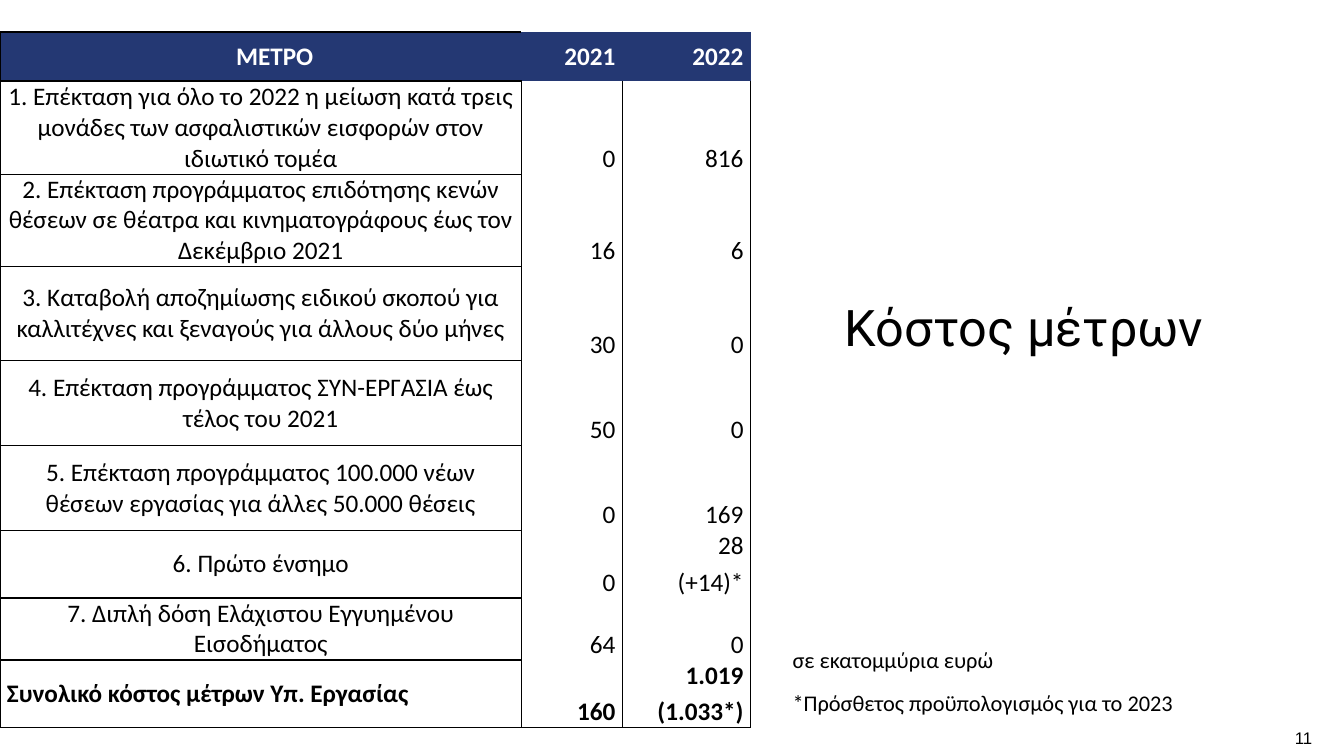
from lxml import etree
from pptx import Presentation
from pptx import util as u
from pptx.dml.color import RGBColor
from pptx.enum import text
from pptx.oxml import ns

EMU_PER_PX = 9080
COLOURS = {"ink": "000000", "header": "243873", "paper": "FFFFFF"}
LEFT, CENTRE, RIGHT = text.PP_ALIGN.LEFT, text.PP_ALIGN.CENTER, text.PP_ALIGN.RIGHT
TOP, MIDDLE, BOTTOM = text.MSO_ANCHOR.TOP, text.MSO_ANCHOR.MIDDLE, text.MSO_ANCHOR.BOTTOM

COLUMN_WIDTHS = [521, 101, 128]
ROW_HEIGHTS = [49, 93, 92, 94, 85, 85, 67, 62, 67]
MEASURES = [
    ("ΜΕΤΡΟ", "2021", "2022"),
    ("1. Επέκταση για όλο το 2022 η μείωση κατά τρεις μονάδες των ασφαλιστικών "
     "εισφορών στον ιδιωτικό τομέα", "0", "816"),
    ("2. Επέκταση προγράμματος επιδότησης κενών θέσεων σε θέατρα και "
     "κινηματογράφους έως τον Δεκέμβριο 2021", "16", "6"),
    ("3. Καταβολή αποζημίωσης ειδικού σκοπού για καλλιτέχνες και ξεναγούς "
     "για άλλους δύο μήνες", "30", "0"),
    ("4. Επέκταση προγράμματος ΣΥΝ-ΕΡΓΑΣΙΑ έως τέλος του 2021", "50", "0"),
    ("5. Επέκταση προγράμματος 100.000 νέων θέσεων εργασίας για άλλες 50.000 θέσεις",
     "0", "169"),
    ("6. Πρώτο ένσημο", "0", "28\n(+14)*"),
    ("7. Διπλή δόση Ελάχιστου Εγγυημένου Εισοδήματος", "64", "0"),
    ("Συνολικό κόστος μέτρων Υπ. Εργασίας", "160", "1.019\n(1.033*)"),
]


def px(length):
    return u.Emu(length * EMU_PER_PX)


class CostSlide:
    """Holds the style and the current slide, and adds its elements."""

    def __init__(self, deck):
        self.slide = deck.slides.add_slide(deck.slide_layouts[5])

    def set_words(self, frame, words, size, font="Calibri", colour="ink", bold=False,
                  align=LEFT, after=0, before=0):
        frame.text = words
        for index, paragraph in enumerate(frame.paragraphs):
            paragraph.alignment = align
            paragraph.space_before = u.Pt(before if index else 0)
            paragraph.space_after = u.Pt(after)
            for run in paragraph.runs:
                run.font.size = u.Pt(size)
                run.font.name = font
                run.font.bold = bold
                run.font.color.rgb = RGBColor.from_string(COLOURS[colour])

    def title(self, words, x, y, width, height):
        heading = self.slide.shapes.title
        heading.left, heading.top = px(x), px(y)
        heading.width, heading.height = px(width), px(height)
        frame = heading.text_frame
        frame.word_wrap = True
        frame.auto_size = text.MSO_AUTO_SIZE.NONE
        frame.vertical_anchor = TOP
        self.set_words(frame, words, 36, font="Roboto")

    def label(self, words, x, y, width, height, size, inset=10, **style):
        frame = self.slide.shapes.add_textbox(px(x), px(y), px(width), px(height)).text_frame
        frame.word_wrap = True
        frame.margin_left = frame.margin_right = px(inset)
        self.set_words(frame, words, size, **style)

    def borders(self, cell, drawn):
        properties = cell._tc.get_or_add_tcPr()
        for index, side in enumerate("LRTB"):
            line = etree.Element(ns.qn(f"a:ln{side}"), w=str(u.Pt(1)))
            if side in drawn:
                fill = etree.SubElement(line, ns.qn("a:solidFill"))
                etree.SubElement(fill, ns.qn("a:srgbClr"), val=COLOURS["ink"])
            else:
                etree.SubElement(line, ns.qn("a:noFill"))
            properties.insert(index, line)

    def cost_table(self, x, y):
        table = self.slide.shapes.add_table(
            len(MEASURES), len(COLUMN_WIDTHS), px(x), px(y),
            px(sum(COLUMN_WIDTHS)), px(sum(ROW_HEIGHTS))).table
        table.horz_banding = table.first_row = False
        for column, width in zip(table.columns, COLUMN_WIDTHS):
            column.width = px(width)
        for row, height in zip(table.rows, ROW_HEIGHTS):
            row.height = px(height)
        last = len(MEASURES) - 1
        for r, measure in enumerate(MEASURES):
            for c, words in enumerate(measure):
                self.cost_cell(table.cell(r, c), words, r == 0, r == last, c == 0)

    def cost_cell(self, cell, words, is_header, is_total, is_name):
        cell.margin_left = px(35 if is_header and is_name else 7)
        cell.margin_right = px(7)
        cell.margin_top = cell.margin_bottom = 0
        cell.vertical_anchor = MIDDLE if is_header or is_name else BOTTOM
        if is_header:
            cell.fill.solid()
            cell.fill.fore_color.rgb = RGBColor.from_string(COLOURS["header"])
            self.borders(cell, "LTB" if is_name else "")
        else:
            cell.fill.background()
            self.borders(cell, "LRTB" if is_name else "LRB")
        name_align = LEFT if is_total else CENTRE
        self.set_words(cell.text_frame, words, 18, colour="paper" if is_header else "ink",
                       bold=is_header or is_total, align=name_align if is_name else RIGHT,
                       after=4)


def main():
    deck = Presentation()
    deck.slide_width, deck.slide_height = px(1343), px(755)
    costs = CostSlide(deck)
    costs.title("Κόστος μέτρων", 834, 291, 391, 129)
    costs.cost_table(0, 32)
    costs.label("σε εκατομμύρια ευρώ\n*Πρόσθετος προϋπολογισμός για το 2023",
                782, 640, 443, 83, 16, before=12)
    costs.label("11", 1286, 722, 33, 31, 12, inset=6, font="Arial", align=CENTRE)
    deck.save("out.pptx")


if __name__ == "__main__":
    main()
